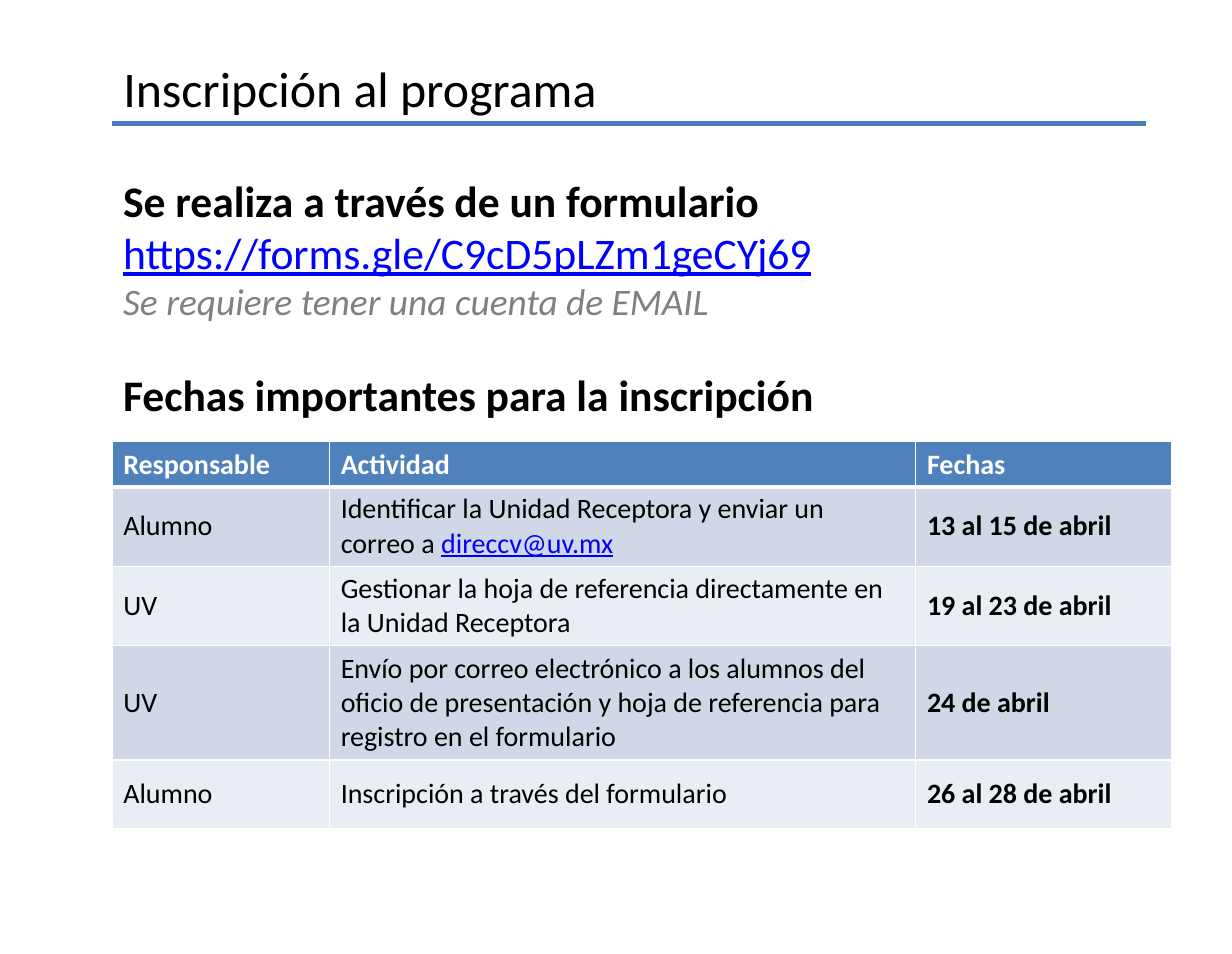
from dataclasses import dataclass

from lxml.etree import SubElement
from pptx import Presentation
from pptx.dml.color import RGBColor
from pptx.enum.shapes import MSO_CONNECTOR
from pptx.enum.text import MSO_ANCHOR, MSO_AUTO_SIZE, PP_ALIGN
from pptx.oxml.ns import qn
from pptx.util import Emu, Pt

EMU_PER_PX = 9144
FONT = "Calibri"
COLORS = {
    "text": "000000",
    "link": "0000FF",
    "note": "808080",
    "rule": "4B7EBC",
    "header": "4F81BD",
    "band_dark": "D0D8E8",
    "band_light": "E9EDF4",
    "white": "FFFFFF",
}
COLUMN_WIDTHS = [194, 523, 228]
ROW_HEIGHTS = [40, 71, 71, 102, 61]


@dataclass(frozen=True)
class Style:
    size: int
    color: str = "text"
    bold: bool = False
    italic: bool = False
    underline: bool = False


@dataclass(frozen=True)
class Line:
    text: str
    style: Style
    space_before: int = 0


@dataclass(frozen=True)
class Task:
    owner: str
    activity: str
    dates: str
    email: str = ""


HEADING = Style(28, bold=True)
CELL = Style(18)
CELL_BOLD = Style(18, bold=True)
CELL_LINK = Style(18, "link", underline=True)
CELL_HEADER = Style(18, "white", bold=True)

LINES = [
    Line("Se realiza a través de un formulario", HEADING),
    Line("https://forms.gle/C9cD5pLZm1geCYj69", Style(28, "link", underline=True)),
    Line("Se requiere tener una cuenta de EMAIL", Style(24, "note", italic=True)),
    Line("Fechas importantes para la inscripción", HEADING, 29),
]
HEADERS = ["Responsable", "Actividad", "Fechas"]
TASKS = [
    Task("Alumno", "Identificar la Unidad Receptora y enviar un correo a ",
         "13 al 15 de abril", "direccv@uv.mx"),
    Task("UV", "Gestionar la hoja de referencia directamente en la Unidad Receptora",
         "19 al 23 de abril"),
    Task("UV", "Envío por correo electrónico a los alumnos del oficio de presentación "
         "y hoja de referencia para registro en el formulario", "24 de abril"),
    Task("Alumno", "Inscripción a través del formulario", "26 al 28 de abril"),
]


def px(length: int) -> Emu:
    return Emu(length * EMU_PER_PX)


def rgb(name: str) -> RGBColor:
    return RGBColor.from_string(COLORS[name])


def format_span(span, style: Style) -> None:
    font = span.font
    font.name = FONT
    font.size = Pt(style.size)
    font.bold = style.bold
    font.italic = style.italic
    font.underline = style.underline
    font.color.rgb = rgb(style.color)


def write(para, text: str, style: Style) -> None:
    para.text = text
    format_span(para.runs[0], style)


def add_title(page, text: str) -> None:
    title = page.shapes.title
    title.left, title.top, title.width, title.height = map(px, (100, 55, 965, 47))
    frame = title.text_frame
    frame.auto_size = MSO_AUTO_SIZE.NONE
    frame.vertical_anchor = MSO_ANCHOR.MIDDLE
    write(frame.paragraphs[0], text, Style(32))
    frame.paragraphs[0].alignment = PP_ALIGN.LEFT


def add_rule(page) -> None:
    rule = page.shapes.add_connector(
        MSO_CONNECTOR.STRAIGHT, px(100), px(110), px(1022), px(110))
    rule.line.color.rgb = rgb("rule")
    rule.line.width = Pt(3.5)
    SubElement(rule._element.spPr, qn("a:effectLst"))


def add_lines(page, lines: list[Line]) -> None:
    box = page.shapes.add_textbox(px(100), px(150), px(965), px(235))
    frame = box.text_frame
    frame.word_wrap = True
    for index, line in enumerate(lines):
        para = frame.add_paragraph() if index else frame.paragraphs[0]
        write(para, line.text, line.style)
        if line.space_before:
            para.space_before = Pt(line.space_before)


def add_borders(cell, top: int, bottom: int) -> None:
    properties = cell._tc.get_or_add_tcPr()
    for side, width in (("L", 1), ("R", 1), ("T", top), ("B", bottom)):
        border = SubElement(properties, qn(f"a:ln{side}"), w=str(Pt(width)))
        fill = SubElement(border, qn("a:solidFill"))
        SubElement(fill, qn("a:srgbClr"), val=COLORS["white"])


def fill_cell(cell, row: int, text: str, style: Style) -> None:
    add_borders(cell, 3 if row == 1 else 1, 3 if row == 0 else 1)
    band = "header" if row == 0 else "band_dark" if row % 2 else "band_light"
    cell.fill.solid()
    cell.fill.fore_color.rgb = rgb(band)
    cell.vertical_anchor = MSO_ANCHOR.MIDDLE
    write(cell.text_frame.paragraphs[0], text, style)


def add_schedule(page, tasks: list[Task]) -> None:
    table = page.shapes.add_table(
        len(ROW_HEIGHTS), len(COLUMN_WIDTHS), px(100), px(394),
        px(sum(COLUMN_WIDTHS)), px(sum(ROW_HEIGHTS))).table
    for column, width in zip(table.columns, COLUMN_WIDTHS):
        column.width = px(width)
    for row, height in zip(table.rows, ROW_HEIGHTS):
        row.height = px(height)
    for column, header in enumerate(HEADERS):
        fill_cell(table.cell(0, column), 0, header, CELL_HEADER)
    for row, task in enumerate(tasks, start=1):
        fill_cell(table.cell(row, 0), row, task.owner, CELL)
        fill_cell(table.cell(row, 1), row, task.activity, CELL)
        fill_cell(table.cell(row, 2), row, task.dates, CELL_BOLD)
        if task.email:
            span = table.cell(row, 1).text_frame.paragraphs[0].add_run()
            span.text = task.email
            format_span(span, CELL_LINK)


def main() -> None:
    deck = Presentation()
    deck.slide_width, deck.slide_height = px(1099), px(851)
    page = deck.slides.add_slide(deck.slide_layouts.get_by_name("Title Only"))
    add_rule(page)
    add_title(page, "Inscripción al programa")
    add_lines(page, LINES)
    add_schedule(page, TASKS)
    deck.save("out.pptx")


if __name__ == "__main__":
    main()
